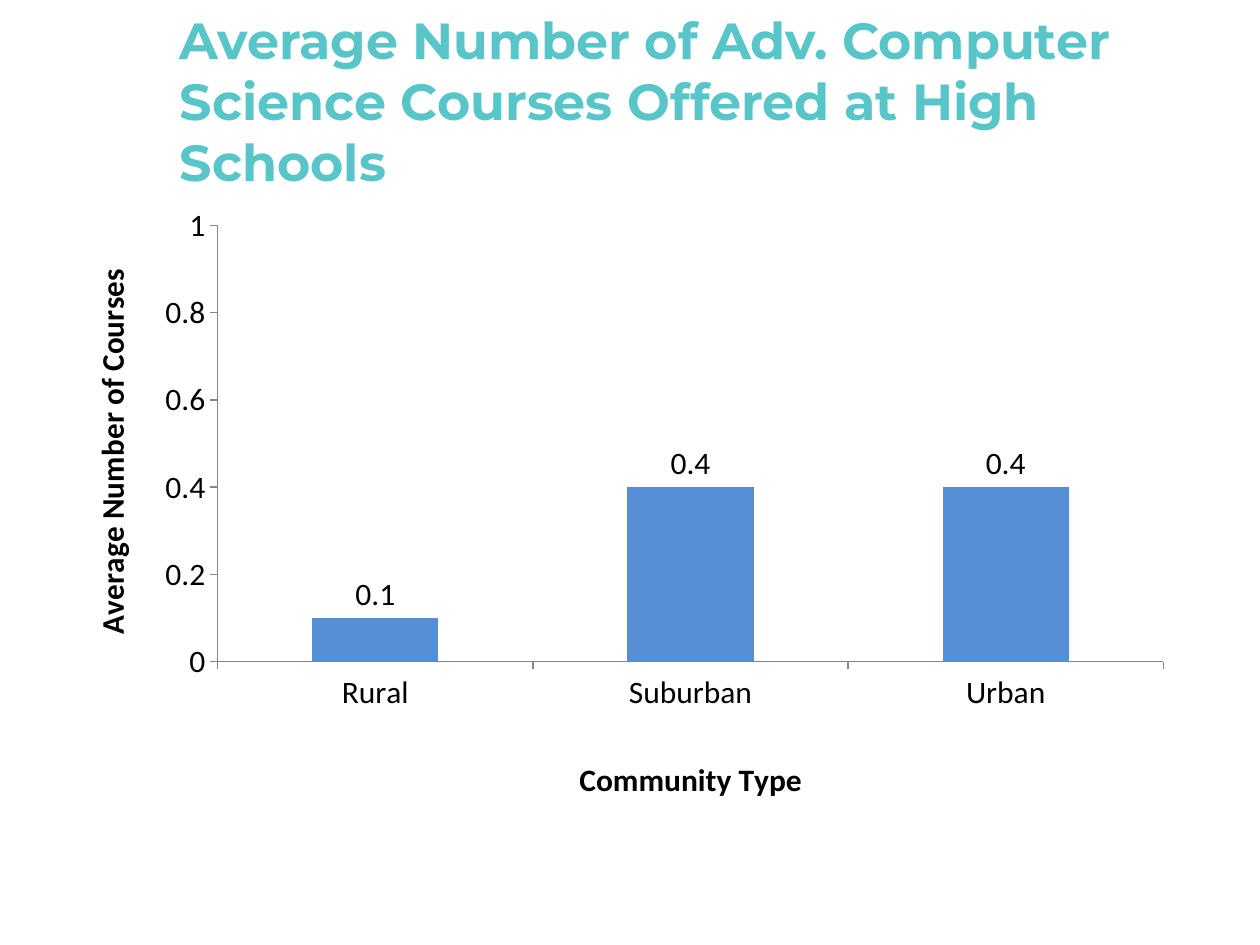
from lxml import etree
from pptx import Presentation
from pptx.chart.data import CategoryChartData as ChartData
from pptx.dml.color import RGBColor as Color
from pptx.enum.chart import XL_CHART_TYPE as ChartType, XL_LABEL_POSITION as LabelPosition
from pptx.enum.chart import XL_TICK_MARK as TickMark
from pptx.enum.text import MSO_ANCHOR as Anchor
from pptx.oxml.ns import qn
from pptx.util import Inches, Pt

COLORS = {"title": "58C5C9", "text": "000000", "bar": "558ED5", "axis": "868686"}


class SlideBuilder:
    """Holds the style and the current slide."""

    def __init__(self, slide):
        self.slide = slide

    def apply(self, target, formats):
        for name, value in formats.items():
            setattr(target, name, value)

    def style_font(self, font, color, **formats):
        self.apply(font, formats)
        font.color.rgb = Color.from_string(COLORS[color])

    def title(self, text, box):
        shape = self.slide.shapes.add_textbox(*map(Inches, box))
        self.apply(shape.text_frame, {"word_wrap": True, "vertical_anchor": Anchor.MIDDLE})
        paragraph = shape.text_frame.paragraphs[0]
        run = paragraph.add_run()
        run.text = text
        self.style_font(run.font, "title", name="Montserrat", size=Pt(29), bold=True)

    def place(self, parent, successor, **fractions):
        for old in parent.findall(qn("c:layout")):
            parent.remove(old)
        layout = etree.Element(qn("c:layout"))
        parent.find(qn(successor)).addprevious(layout)
        manual = etree.SubElement(layout, qn("c:manualLayout"))
        if "w" in fractions:
            etree.SubElement(manual, qn("c:layoutTarget")).set("val", "inner")
        for side in "xy":
            etree.SubElement(manual, qn(f"c:{side}Mode")).set("val", "edge")
        for side, value in fractions.items():
            etree.SubElement(manual, qn(f"c:{side}")).set("val", str(value))

    def axis(self, axis, title, x, y, **formats):
        self.apply(axis, {"has_major_gridlines": False, "major_tick_mark": TickMark.OUTSIDE,
                          "minor_tick_mark": TickMark.NONE, **formats})
        axis.format.line.color.rgb = Color.from_string(COLORS["axis"])
        axis.format.line.width = Pt(0.75)
        axis_title = axis.axis_title
        paragraph = axis_title.text_frame.paragraphs[0]
        run = paragraph.add_run()
        run.text = title
        self.style_font(run.font, "text", name="Calibri", size=Pt(18), bold=True)
        self.place(axis_title._element, "c:overlay", x=x, y=y)

    def column_chart(self, categories, values, box):
        data = ChartData(number_format="General")
        data.categories = categories
        data.add_series("Series 1", values)
        frame = self.slide.shapes.add_chart(
            ChartType.COLUMN_CLUSTERED, *map(Inches, box), data)
        chart = frame.chart
        self.apply(chart, {"has_legend": False, "has_title": False})
        self.style_font(chart.font, "text", name="Calibri", size=Pt(18))
        plot = chart.plots[0]
        self.apply(plot, {"gap_width": 150, "vary_by_categories": False,
                          "has_data_labels": True})
        self.apply(plot.data_labels, {"show_value": True,
                                      "position": LabelPosition.OUTSIDE_END})
        fill = plot.series[0].format.fill
        fill.solid()
        fill.fore_color.rgb = Color.from_string(COLORS["bar"])
        plot_area = chart._chartSpace.chart.plotArea
        self.place(plot_area, "c:barChart", x=0.13, y=0.05, w=0.85, h=0.72)
        return chart


def main():
    presentation = Presentation()
    presentation.slide_width, presentation.slide_height = Inches(10), Inches(7.5)
    builder = SlideBuilder(presentation.slides.add_slide(presentation.slide_layouts[6]))
    chart = builder.column_chart(["Rural", "Suburban", "Urban"], [0.1, 0.4, 0.4],
                                 (0.58, 1.55, 8.83, 4.87))
    builder.axis(chart.category_axis, "Community Type", 0.45, 0.92)
    builder.axis(chart.value_axis, "Average Number of Courses", 0.01, 0.12,
                 minimum_scale=0, maximum_scale=1, major_unit=0.2)
    builder.title("Average Number of Adv. Computer Science Courses Offered at High Schools",
                  (1.33, 0.17, 8.33, 1.25))
    presentation.save("out.pptx")


if __name__ == "__main__":
    main()
